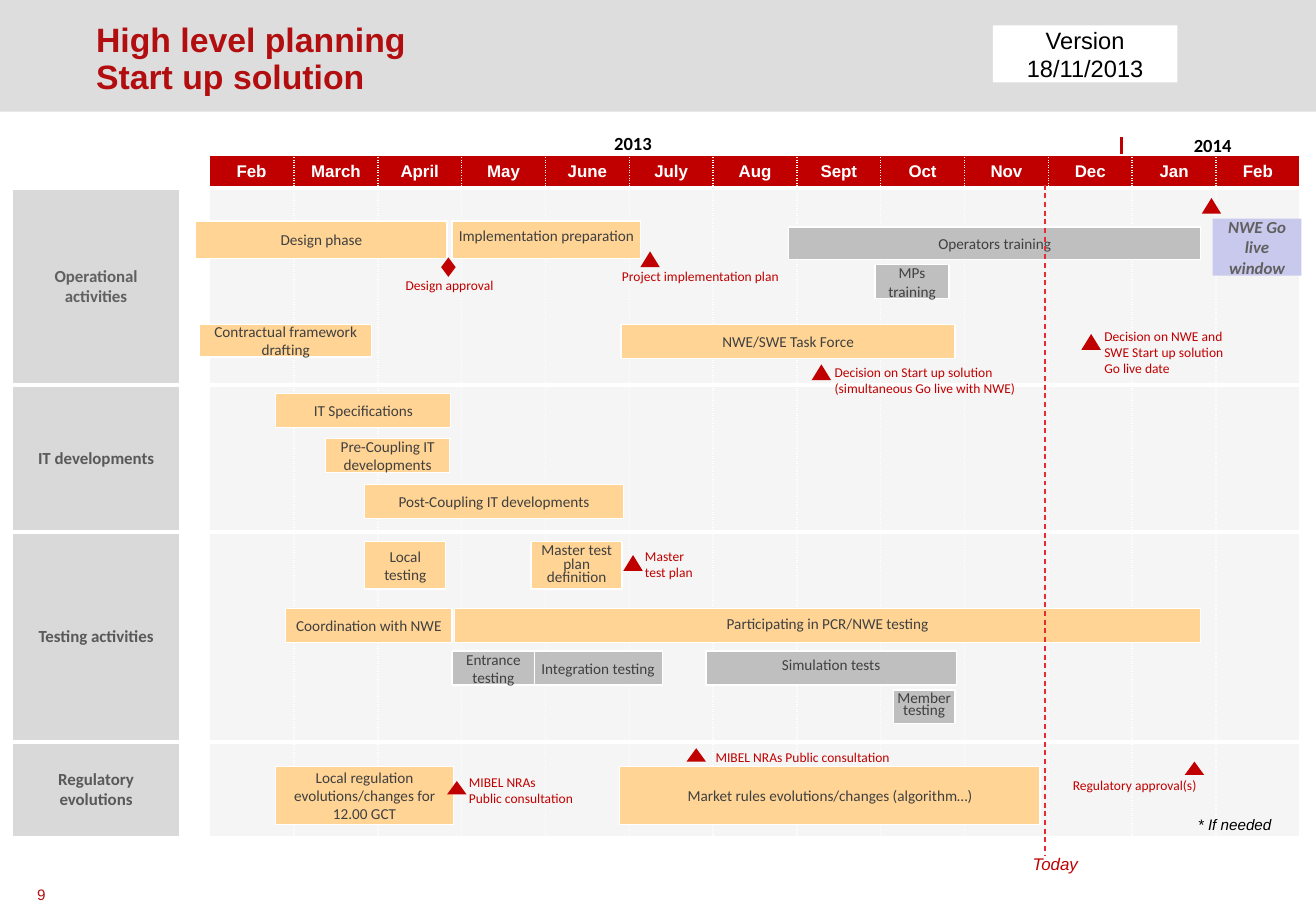
from lxml import etree
from pptx import Presentation
from pptx.dml.color import RGBColor
from pptx.enum.dml import MSO_LINE
from pptx.enum.shapes import MSO_CONNECTOR, MSO_SHAPE
from pptx.enum.text import MSO_ANCHOR, MSO_AUTO_SIZE, PP_ALIGN
from pptx.oxml.ns import qn
from pptx.util import Inches, Pt

LEFT, CENTER = PP_ALIGN.LEFT, PP_ALIGN.CENTER
TOP, MIDDLE = MSO_ANCHOR.TOP, MSO_ANCHOR.MIDDLE
FIXED, GROW = MSO_AUTO_SIZE.NONE, MSO_AUTO_SIZE.SHAPE_TO_FIT_TEXT
RECT, TRIANGLE, DIAMOND = MSO_SHAPE.RECTANGLE, MSO_SHAPE.ISOSCELES_TRIANGLE, MSO_SHAPE.DIAMOND
STRAIGHT, DASH = MSO_CONNECTOR.STRAIGHT, MSO_LINE.DASH

RED, TITLE_RED, TODAY_RED = "C00000", "B20E10", "E62B32"
ORANGE, GREY, LILAC = "FFD494", "BFBFBF", "C9C9ED"
WHITE, BLACK, INK = "FFFFFF", "000000", "404040"
BAND, LABEL_FILL, MONTH_FILL = "DDDDDD", "D9D9D9", "F5F5F5"

MONTHS = ["Feb", "March", "April", "May", "June", "July", "Aug",
          "Sept", "Oct", "Nov", "Dec", "Jan", "Feb"]
# label, row height, label colour
ACTIVITIES = [("Operational activities", 1.62, "606060"),
              ("IT developments", 1.21, "595959"),
              ("Testing activities", 1.73, "595959"),
              ("Regulatory evolutions", 0.79, "595959")]
FIRST_MONTH = 2

# text, left, top, width, height, fill, extra text format
BARS = [
    ("Design phase", 1.61, 1.82, 2.07, 0.31, ORANGE, {}),
    ("Implementation preparation", 3.72, 1.82, 1.55, 0.31, ORANGE, {"spacing": Pt(6)}),
    ("Operators training", 6.49, 1.87, 3.39, 0.27, GREY, {}),
    ("MPs training", 7.2, 2.18, 0.61, 0.28, GREY, {}),
    ("Contractual framework drafting", 1.64, 2.67, 1.42, 0.27, ORANGE, {}),
    ("NWE/SWE Task Force", 5.11, 2.67, 2.75, 0.28, ORANGE, {}),
    ("IT Specifications", 2.27, 3.24, 1.44, 0.28, ORANGE, {"insets": (0, 0)}),
    ("Pre-Coupling IT developments", 2.68, 3.61, 1.02, 0.28, ORANGE, {}),
    ("Post-Coupling IT developments", 3, 3.99, 2.13, 0.28, ORANGE, {}),
    ("Local testing", 3, 4.46, 0.67, 0.39, ORANGE, {}),
    ("Master test plan definition", 4.37, 4.46, 0.75, 0.39, ORANGE, {"spacing": Pt(8)}),
    ("Coordination with NWE", 2.35, 5.01, 1.37, 0.28, ORANGE, {}),
    ("Participating in PCR/NWE testing", 3.74, 5.01, 6.14, 0.28, ORANGE, {"spacing": Pt(8)}),
    ("Integration testing", 4.39, 5.36, 1.06, 0.28, GREY, {}),
    ("Entrance testing", 3.72, 5.36, 0.68, 0.28, GREY, {}),
    ("Simulation tests", 5.81, 5.36, 2.06, 0.28, GREY, {"insets": (0, 0), "spacing": Pt(7)}),
    ("Member\ntesting", 7.35, 5.68, 0.51, 0.28, GREY, {"insets": (0, 0), "spacing": Pt(7)}),
    ("Local regulation evolutions/changes for 12.00 GCT", 2.27, 6.31, 1.46, 0.48, ORANGE, {}),
    ("Market rules evolutions/changes (algorithm…)", 5.1, 6.31, 3.46, 0.48, ORANGE, {}),
]
# left, top, height
MILESTONES = [(9.89, 1.63, 0.13), (5.27, 2.07, 0.13), (8.9, 2.75, 0.13), (6.68, 3, 0.13),
              (5.13, 4.57, 0.13), (5.65, 6.16, 0.11), (9.75, 6.27, 0.11), (3.68, 6.43, 0.11)]
# text, left, top, width, height, extra text format
MILESTONE_NOTES = [
    ("Project implementation plan", 5.02, 2.16, 1.59, 0.24, {}),
    ("Design approval", 3.01, 2.23, 1.38, 0.24, {"align": CENTER}),
    ("Decision on NWE and SWE Start up solution Go live date", 8.99, 2.65, 1.24, 0.5, {}),
    ("Decision on Start up solution (simultaneous Go live with NWE)", 6.77, 2.95, 1.83, 0.37, {}),
    ("Master test plan", 5.21, 4.46, 0.6, 0.37, {}),
    ("MIBEL NRAs Public consultation", 5.79, 6.11, 1.69, 0.24, {"anchor": MIDDLE}),
    ("MIBEL NRAs\nPublic consultation", 3.76, 6.32, 1.18, 0.37, {"anchor": MIDDLE}),
    ("Regulatory approval(s)", 8.73, 6.35, 1.48, 0.24, {}),
]


def rgb(value):
    return RGBColor.from_string(value)


def write_text(frame, text, size=9, color=INK, font="Calibri", bold=False, italic=False,
               align=LEFT, spacing=None):
    frame.text = text
    for paragraph in frame.paragraphs:
        paragraph.alignment = align
        if spacing:
            paragraph.line_spacing = spacing
        for line_break in paragraph._p.findall(qn("a:br")):
            etree.SubElement(line_break, qn("a:rPr"), sz=str(size * 100))
        for run in paragraph.runs:
            run.font.size, run.font.name = Pt(size), font
            run.font.bold, run.font.italic = bold, italic
            run.font.color.rgb = rgb(color)


def set_frame(frame, anchor=TOP, insets=(0.1, 0.05), wrap=True, fit=FIXED):
    frame.auto_size, frame.word_wrap, frame.vertical_anchor = fit, wrap, anchor
    frame.margin_left = frame.margin_right = Inches(insets[0])
    frame.margin_top = frame.margin_bottom = Inches(insets[1])


def add_note(slide, text, left, top, width, height, anchor=TOP, insets=(0.1, 0.05),
             wrap=True, fit=GROW, **text_format):
    note = slide.shapes.add_textbox(Inches(left), Inches(top), Inches(width), Inches(height))
    set_frame(note.text_frame, anchor, insets, wrap, fit)
    write_text(note.text_frame, text, **text_format)


def add_block(slide, kind, left, top, width, height, fill, outline=None, text="",
              insets=(0.04, 0), **text_format):
    block = slide.shapes.add_shape(kind, Inches(left), Inches(top), Inches(width), Inches(height))
    block.shadow.inherit = False
    block.fill.solid()
    block.fill.fore_color.rgb = rgb(fill)
    if outline:
        block.line.color.rgb = rgb(outline)
        block.line.width = Pt(0.75)
    else:
        block.line.fill.background()
    if text:
        set_frame(block.text_frame, MIDDLE, insets)
        write_text(block.text_frame, text, align=CENTER, **text_format)
    return block


def add_rule(slide, x, top, bottom, color, width, dash=None):
    rule = slide.shapes.add_connector(STRAIGHT, Inches(x), Inches(top), Inches(x), Inches(bottom))
    rule.line.color.rgb = rgb(color)
    rule.line.width = Pt(width)
    if dash:
        rule.line.dash_style = dash
    etree.SubElement(rule._element.spPr, qn("a:effectLst"))


def set_borders(cell, row, column, last_column):
    sides = [("a:lnL", 1, column > FIRST_MONTH),
             ("a:lnR", 1, FIRST_MONTH <= column < last_column),
             ("a:lnT", 3 if row else 1, False),
             ("a:lnB", 3, False)]
    properties = cell._tc.get_or_add_tcPr()
    for tag, width, dotted in sides:
        border = etree.SubElement(properties, qn(tag), w=str(Pt(width)))
        solid = etree.SubElement(border, qn("a:solidFill"))
        etree.SubElement(solid, qn("a:srgbClr"), val=WHITE)
        etree.SubElement(border, qn("a:prstDash"), val="sysDot" if dotted else "solid")


def add_calendar(slide):
    widths = [1.38, 0.16, 0.7] + [0.69] * (len(MONTHS) - 1)
    heights = [0.23] + [height for _, height, _ in ACTIVITIES]
    calendar = slide.shapes.add_table(len(heights), len(widths), Inches(0.1), Inches(1.28),
                                      Inches(10.51), Inches(5.62)).table
    calendar.first_row = calendar.horz_banding = False
    for column, width in zip(calendar.columns, widths):
        column.width = Inches(width)
    for row, height in zip(calendar.rows, heights):
        row.height = Inches(height)

    for r in range(len(heights)):
        for c in range(len(widths)):
            cell = calendar.cell(r, c)
            set_borders(cell, r, c, len(widths) - 1)
            text, color, fill = "", WHITE, WHITE
            if c >= FIRST_MONTH:
                fill = MONTH_FILL if r else RED
                text = "" if r else MONTHS[c - FIRST_MONTH]
            elif r and c == 0:
                text, _, color = ACTIVITIES[r - 1]
                fill = LABEL_FILL
            cell.fill.solid()
            cell.fill.fore_color.rgb = rgb(fill)
            cell.vertical_anchor = MIDDLE
            if text:
                write_text(cell.text_frame, text, size=10, color=color, bold=True, align=CENTER,
                           font="Calibri" if r else "Arial")
            else:
                etree.SubElement(cell.text_frame.paragraphs[0]._p, qn("a:endParaRPr"), sz="1000")


def add_header(slide):
    band = add_block(slide, RECT, -0.01, -0.01, 10.85, 0.93, BAND)
    slide.shapes._spTree.insert(2, band._element)  # behind the title
    title = slide.shapes.title
    title.left, title.top = Inches(0.79), Inches(0.32)
    title.width, title.height = Inches(7.38), Inches(0.35)
    set_frame(title.text_frame, MIDDLE, (0, 0))
    write_text(title.text_frame, "High level planning\vStart up solution", size=20,
               color=TITLE_RED, font="Arial", bold=True, spacing=0.9)
    add_block(slide, RECT, 8.17, 0.21, 1.52, 0.47, WHITE, text="Version\n18/11/2013",
              insets=(0.1, 0.05), size=14, color=BLACK, font="Arial")


def main():
    prs = Presentation()
    prs.slide_width, prs.slide_height = Inches(10.83), Inches(7.5)
    slide = prs.slides.add_slide(prs.slide_layouts[5])
    add_header(slide)

    # Calendar grid and years
    add_calendar(slide)
    for year, left, top in [("2013", 4.78, 1.04), ("2014", 9.55, 1.05)]:
        add_note(slide, year, left, top, 0.86, 0.29, size=11, color=BLACK, bold=True, align=CENTER)
    add_rule(slide, 9.23, 1.13, 1.27, RED, 1.5)

    # Activity bars
    for text, left, top, width, height, fill, extra in BARS:
        add_block(slide, RECT, left, top, width, height, fill, WHITE, text, **extra)
    add_block(slide, RECT, 9.98, 1.8, 0.73, 0.47, LILAC, text="NWE Go live window",
              insets=(0.04, 0.05), size=10, color="606060", bold=True, italic=True)

    # Milestones
    for left, top, height in MILESTONES:
        add_block(slide, TRIANGLE, left, top, 0.16, height, RED)
    add_block(slide, DIAMOND, 3.63, 2.12, 0.12, 0.16, RED)
    for text, left, top, width, height, extra in MILESTONE_NOTES:
        add_note(slide, text, left, top, width, height, size=8, color=RED, **extra)

    # Today marker, footnote and page number
    add_rule(slide, 8.6, 1.52, 7.04, TODAY_RED, 0.75, DASH)
    add_note(slide, "Today", 8.4, 6.98, 1.44, 0.27, size=10, color=RED, font="Arial", italic=True)
    add_note(slide, "* If needed", 9.76, 6.66, 0.81, 0.25, wrap=False, color=BLACK,
             font="Arial", italic=True)
    add_note(slide, "9", 0.14, 7.26, 0.4, 0.2, anchor=MIDDLE, insets=(0.04, 0.04), wrap=False,
             fit=FIXED, color=TITLE_RED, font="Arial", align=CENTER)
    prs.save("out.pptx")


if __name__ == "__main__":
    main()
